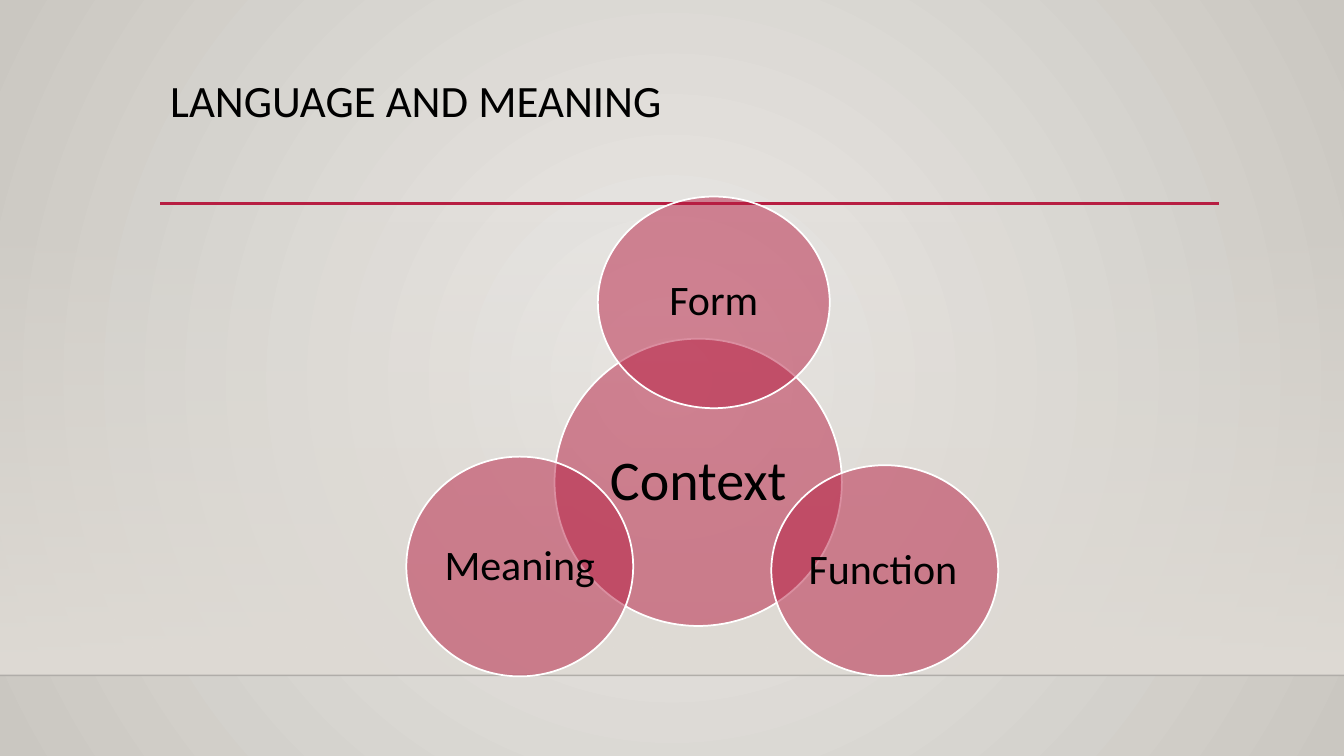
import pptx
import pptx.util
import pptx.dml.color
import pptx.enum.shapes
import pptx.enum.text
import pptx.oxml
import pptx.oxml.ns
from dataclasses import dataclass

Inches, Pt = pptx.util.Inches, pptx.util.Pt
qn = pptx.oxml.ns.qn
ALIGN = pptx.enum.text.PP_ALIGN
ANCHOR = pptx.enum.text.MSO_ANCHOR

# Content: label, centre x, centre y, width, height, alignment, size, inset
TITLE = "LANGUAGE AND MEANING"
CIRCLES = [
    ("Context", 6.925, 4.785, 2.85, 2.85, ALIGN.CENTER, "hub", 0.06),
    ("Form", 7.08, 3.0, 2.3, 2.1, ALIGN.CENTER, "circle", 0.04),
    ("Function", 8.775, 5.66, 2.25, 2.09, ALIGN.LEFT, "circle", 0.04),
    ("Meaning", 5.155, 5.62, 2.25, 2.18, ALIGN.CENTER, "circle", 0.04),
]


@dataclass
class Theme:
    font = "Calibri"
    sizes = {"title": 32, "hub": 40, "circle": 30}
    text = "000000"
    accent = "B71E42"
    outline = "FFFFFF"
    floor_line = "000001"
    floor = "DFDBD5"
    glow = "ECEAE7"
    edge = "CAC7C1"


# Grid
WIDTH, HEIGHT = 13.33, 7.5
MARGIN, TITLE_TOP, TITLE_HEIGHT, CONTENT_WIDTH = 1.59, 0.73, 1.15, 10.5
RULE_Y, BAND_Y, FLOOR_Y = 2.02, 2.21, 6.7


def color(value):
    return pptx.dml.color.RGBColor.from_string(value)


def set_alpha(container, percent):
    for node in container.iter(qn("a:srgbClr")):
        node.append(pptx.oxml.parse_xml(
            f'<a:alpha {pptx.oxml.ns.nsdecls("a")} val="{percent * 1000}"/>'))


def set_gradient(element, stops, direction):
    gradient = next(element.iter(qn("a:gradFill")))
    marks = ""
    for position, value, alpha in stops:
        opacity = f'<a:alpha val="{alpha * 1000}"/>' if alpha < 100 else ""
        marks += (f'<a:gs pos="{position * 1000}"><a:srgbClr val="{value}">'
                  f'{opacity}</a:srgbClr></a:gs>')
    gradient.getparent().replace(gradient, pptx.oxml.parse_xml(
        f'<a:gradFill {pptx.oxml.ns.nsdecls("a")} rotWithShape="1">'
        f'<a:gsLst>{marks}</a:gsLst>{direction}</a:gradFill>'))


def add_rule(slide, left, right, y, value, weight, alpha=100):
    line = slide.shapes.add_connector(
        pptx.enum.shapes.MSO_CONNECTOR.STRAIGHT,
        Inches(left), Inches(y), Inches(right), Inches(y))
    line.line.color.rgb = color(value)
    line.line.width = Pt(weight)
    properties = line.element.spPr
    if alpha < 100:
        set_alpha(properties, alpha)
    properties.append(pptx.oxml.parse_xml(
        f'<a:effectLst {pptx.oxml.ns.nsdecls("a")}/>'))


def write(shape, label, size, alignment, anchor):
    frame = shape.text_frame
    frame.word_wrap = True
    frame.vertical_anchor = anchor
    paragraph = frame.paragraphs[0]
    paragraph.alignment = alignment
    paragraph.line_spacing = 0.9
    run = paragraph.add_run()
    run.text = label
    run.font.name = Theme.font
    run.font.size = Pt(Theme.sizes[size])
    run.font.color.rgb = color(Theme.text)
    return frame


def add_circle(slide, label, x, y, width, height, alignment, size, inset):
    circle = slide.shapes.add_shape(
        pptx.enum.shapes.MSO_SHAPE.OVAL, Inches(x - width / 2),
        Inches(y - height / 2), Inches(width), Inches(height))
    circle.shadow.inherit = False
    circle.fill.solid()
    circle.fill.fore_color.rgb = color(Theme.accent)
    set_alpha(circle.element.spPr, 50)
    circle.line.color.rgb = color(Theme.outline)
    circle.line.width = Pt(1.25)
    frame = write(circle, label, size, alignment, ANCHOR.MIDDLE)
    frame.margin_left = frame.margin_right = Inches(inset)
    frame.margin_top = frame.margin_bottom = Inches(inset)


def main():
    presentation = pptx.Presentation()
    presentation.slide_width = Inches(WIDTH)
    presentation.slide_height = Inches(HEIGHT)
    slide = presentation.slides.add_slide(presentation.slide_layouts[6])

    # Backdrop: radial glow, wall fading into the floor line
    slide.background.fill.gradient()
    set_gradient(
        slide.element, [(0, Theme.glow, 100), (100, Theme.edge, 100)],
        '<a:path path="circle"><a:fillToRect l="50000" t="50000" '
        'r="50000" b="50000"/></a:path>')
    wall = slide.shapes.add_shape(
        pptx.enum.shapes.MSO_SHAPE.RECTANGLE, 0, Inches(BAND_Y),
        Inches(WIDTH), Inches(FLOOR_Y - BAND_Y))
    wall.shadow.inherit = False
    wall.line.fill.background()
    wall.fill.gradient()
    set_gradient(
        wall.element, [(0, Theme.floor, 1), (100, Theme.floor, 100)],
        '<a:lin ang="5400000" scaled="0"/>')
    add_rule(slide, 0, WIDTH, FLOOR_Y, Theme.floor_line, 1, 20)

    # Title and rule
    add_rule(slide, MARGIN, MARGIN + CONTENT_WIDTH, RULE_Y, Theme.accent, 2.5)
    title = slide.shapes.add_textbox(
        Inches(MARGIN), Inches(TITLE_TOP),
        Inches(CONTENT_WIDTH), Inches(TITLE_HEIGHT))
    write(title, TITLE, "title", ALIGN.LEFT, ANCHOR.TOP)

    # Overlapping circles
    for circle in CIRCLES:
        add_circle(slide, *circle)

    presentation.save("out.pptx")


if __name__ == "__main__":
    main()
